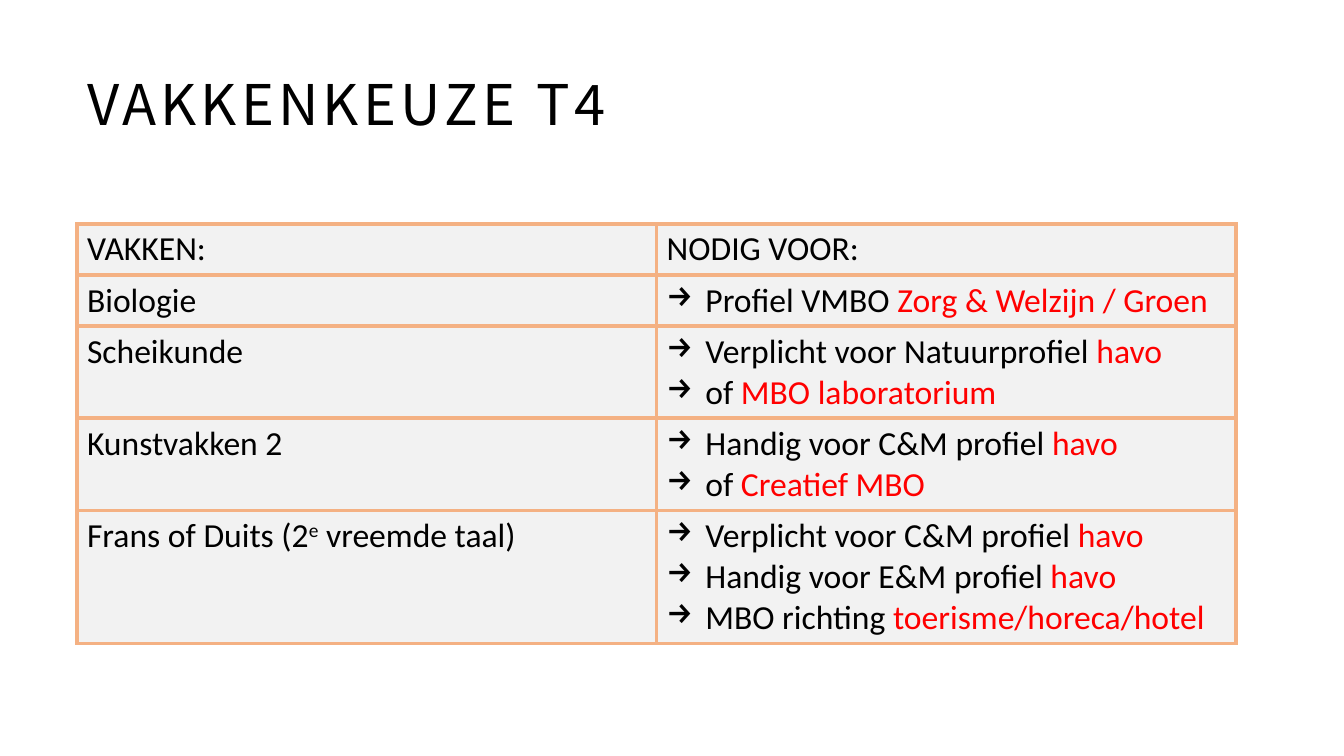
from lxml import etree
from pptx import Presentation
from pptx.dml.color import RGBColor
from pptx.enum.text import MSO_ANCHOR, MSO_AUTO_SIZE, PP_ALIGN
from pptx.oxml.ns import qn
from pptx.util import Pt

LEFT, MIDDLE, NO_FIT = PP_ALIGN.LEFT, MSO_ANCHOR.MIDDLE, MSO_AUTO_SIZE.NONE
TITLE_ONLY = 5
COLORS = {"text": "000000", "accent": "FF0000", "cell": "F2F2F2", "border": "F4B183"}
BODY, HEAD = "Calibri", "Noto Sans CJK SC"
INDENT, BORDER = 27.7, 3
LINE, PAD = 29.3, 7.2

# A cell is a list of paragraphs; a paragraph is a list of (text, format) runs.
RED = {"color": "accent"}
SUBJECTS = [
    ([("Biologie", {})],
     [[("Profiel VMBO ", {}), ("Zorg & Welzijn / Groen", RED)]]),
    ([("Scheikunde", {})],
     [[("Verplicht voor Natuurprofiel ", {}), ("havo", RED)],
      [("of ", {}), ("MBO laboratorium", RED)]]),
    ([("Kunstvakken 2", {})],
     [[("Handig voor C&M profiel ", {}), ("havo", RED)],
      [("of ", {}), ("Creatief MBO", RED)]]),
    ([("Frans of Duits (2", {}), ("e", {"base": 30}), (" vreemde taal)", {})],
     [[("Verplicht voor C&M profiel ", {}), ("havo", RED)],
      [("Handig voor E&M profiel ", {}), ("havo", RED)],
      [("MBO richting ", {}), ("toerisme/horeca/hotel", RED)]]),
]


def rgb(name):
    return RGBColor.from_string(COLORS[name])


def add_run(para, text, font=BODY, size=24, color="text", base=0, space=0):
    run = para.add_run()
    run.text = text
    run.font.name, run.font.size = font, Pt(size)
    run.font.color.rgb = rgb(color)
    props = run.font._element
    if base:
        props.set("baseline", str(base * 1000))
    if space:
        props.set("spc", str(space * 100))


def add_arrow(para):
    """Give a paragraph an arrow bullet with a hanging indent."""
    props = para._p.get_or_add_pPr()
    props.set("marL", str(Pt(INDENT)))
    props.set("indent", str(-Pt(INDENT)))
    etree.SubElement(props, qn("a:buChar"), char="→")


def style_cell(cell):
    props = cell._tc.get_or_add_tcPr()
    for side in ("lnL", "lnR", "lnT", "lnB"):
        line = etree.SubElement(props, qn("a:" + side), w=str(Pt(BORDER)))
        fill = etree.SubElement(line, qn("a:solidFill"))
        etree.SubElement(fill, qn("a:srgbClr"), val=COLORS["border"])
    cell.fill.solid()
    cell.fill.fore_color.rgb = rgb("cell")


def fill_cell(cell, paras, arrows):
    style_cell(cell)
    frame = cell.text_frame
    for i, runs in enumerate(paras):
        para = frame.add_paragraph() if i else frame.paragraphs[0]
        if arrows:
            add_arrow(para)
        for text, look in runs:
            add_run(para, text, **look)


def add_title(slide, text, x, y, w, h):
    title = slide.shapes.title
    title.left, title.top, title.width, title.height = Pt(x), Pt(y), Pt(w), Pt(h)
    frame = title.text_frame
    frame.auto_size, frame.vertical_anchor = NO_FIT, MIDDLE
    para = frame.paragraphs[0]
    para.alignment, para.line_spacing = LEFT, 0.9
    add_run(para, text, font=HEAD, size=40, space=3)


def add_subjects(slide, x, y, w):
    heads = ([("VAKKEN:", {})], [[("NODIG VOOR:", {})]])
    rows = [heads] + SUBJECTS
    heights = [PAD + LINE * len(needs) for _, needs in rows]
    table = slide.shapes.add_table(
        len(rows), 2, Pt(x), Pt(y), Pt(w), Pt(sum(heights))).table
    table.first_row = table.horz_banding = False
    for col in table.columns:
        col.width = Pt(w / 2)
    for i, (name, needs) in enumerate(rows):
        table.rows[i].height = Pt(heights[i])
        fill_cell(table.cell(i, 0), [name], False)
        fill_cell(table.cell(i, 1), needs, i > 0)


def main():
    deck = Presentation()
    deck.slide_width, deck.slide_height = Pt(960), Pt(540)
    slide = deck.slides.add_slide(deck.slide_layouts[TITLE_ONLY])
    add_title(slide, "VAKKENKEUZE T4", 55, 24.5, 828, 104.5)
    add_subjects(slide, 55, 160, 828)
    deck.save("out.pptx")


if __name__ == "__main__":
    main()
